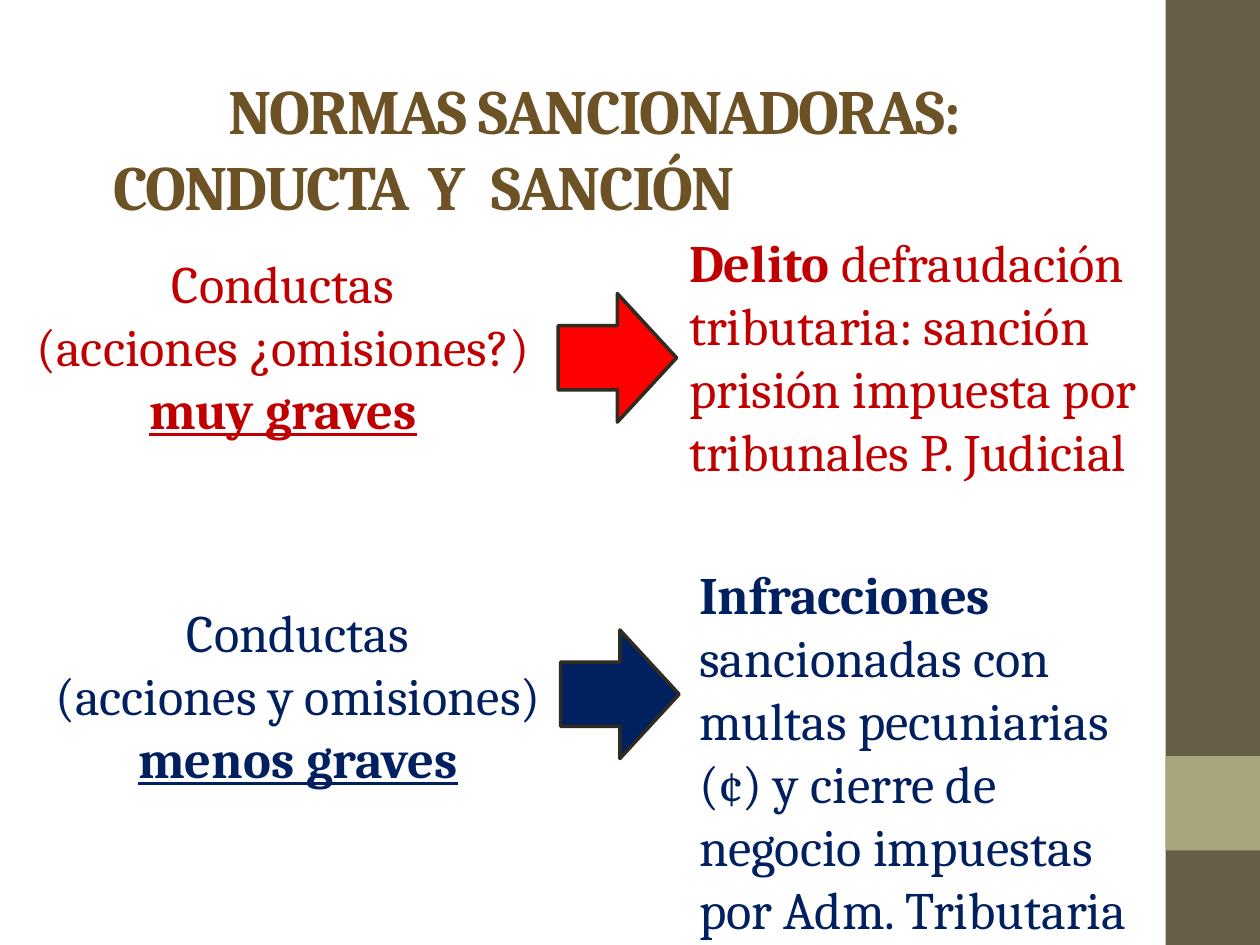
from lxml import etree
from pptx import Presentation
from pptx.dml.color import RGBColor
from pptx.enum.shapes import MSO_SHAPE
from pptx.enum.text import MSO_ANCHOR, PP_ALIGN
from pptx.oxml.ns import qn
from pptx.util import Inches, Pt

RECTANGLE = MSO_SHAPE.RECTANGLE
RIGHT_ARROW = MSO_SHAPE.RIGHT_ARROW
TOP = MSO_ANCHOR.TOP
LEFT = PP_ALIGN.LEFT
CENTER = PP_ALIGN.CENTER

FONT = "Cambria"
BROWN, OLIVE, SAGE, OUTLINE = "6D5225", "675E47", "A9A57C", "2F2B20"
DARK_RED, RED, NAVY = "C00000", "FF0000", "002060"


def color(hex_string):
    """Return the colour for a hex string."""
    return RGBColor.from_string(hex_string)


def add_filled_shape(slide, kind, box, fill, line=None):
    """Place a preset shape with a plain fill and an optional outline."""
    shape = slide.shapes.add_shape(kind, *map(Inches, box))
    shape.shadow.inherit = False
    shape.fill.solid()
    shape.fill.fore_color.rgb = color(fill)
    if line:
        shape.line.color.rgb = color(line)
        shape.line.width = Pt(2)
    else:
        shape.line.fill.background()


def add_text(slide, box, paragraphs, size, hex_color, alignment):
    """Place wrapped text whose runs are pairs of wording and style letters."""
    frame = slide.shapes.add_textbox(*map(Inches, box)).text_frame
    frame.word_wrap = True
    frame.vertical_anchor = TOP
    for index, runs in enumerate(paragraphs):
        paragraph = frame.add_paragraph() if index else frame.paragraphs[0]
        paragraph.alignment = alignment
        for text, style in runs:
            run = paragraph.add_run()
            run.text = text
            run.font.name = FONT
            run.font.size = Pt(size)
            run.font.bold = "b" in style
            run.font.underline = "u" in style
            run.font.color.rgb = color(hex_color)
    return frame


def add_sidebar(slide, box):
    """Draw the side band with its square accent."""
    left, top, width, height = box
    add_filled_shape(slide, RECTANGLE, box, OLIVE)
    accent_top = top + height - 2 * width
    add_filled_shape(slide, RECTANGLE, (left, accent_top, width, width), SAGE)


def add_title(slide, box):
    """Write the heading with its second line spread over tab stops."""
    lines = [[("NORMAS SANCIONADORAS:", "b")], [("CONDUCTA\tY\tSANCIÓN", "b")]]
    frame = add_text(slide, box, lines, 36, BROWN, CENTER)
    for paragraph in frame.paragraphs:
        for run in paragraph.runs:
            run.font._element.set("spc", "-100")
    columns = frame.paragraphs[1]
    columns.alignment = LEFT
    properties = columns._p.get_or_add_pPr()
    properties.set("marL", str(Inches(0.45)))
    properties.set("indent", "0")
    tabs = etree.SubElement(properties, qn("a:tabLst"))
    for position in (4.34, 6.14):
        etree.SubElement(tabs, qn("a:tab"), pos=str(Inches(position)), algn="l")


def add_rule(slide, conduct_box, arrow_at, sanction_box, conduct, sanction, text_color, arrow_color):
    """Link a conduct to its sanction with an arrow."""
    add_text(slide, conduct_box, conduct, 30, text_color, CENTER)
    add_filled_shape(slide, RIGHT_ARROW, (*arrow_at, 0.94, 1.02), arrow_color, OUTLINE)
    add_text(slide, sanction_box, [sanction], 30, text_color, LEFT)


def main():
    """Build and save the slide."""
    presentation = Presentation()
    presentation.slide_width = Inches(10)
    presentation.slide_height = Inches(7.5)
    slide = presentation.slides.add_slide(presentation.slide_layouts[6])
    add_sidebar(slide, (9.25, 0, 0.75, 7.5))
    add_title(slide, (0.35, 0.52, 8.74, 1.42))
    add_rule(
        slide, (0, 1.94, 4.49, 1.62), (4.43, 2.33), (5.37, 1.78, 3.98, 2.12),
        [[("Conductas", "")], [("(acciones ¿omisiones?) ", ""), ("muy graves", "bu")]],
        [("Delito", "b"),
         (" defraudación tributaria: sanción prisión impuesta por tribunales P. Judicial", "")],
        DARK_RED, RED,
    )
    add_rule(
        slide, (0.12, 4.71, 4.49, 1.62), (4.45, 5), (5.45, 4.41, 3.91, 3.13),
        [[("Conductas", "")], [("(acciones y omisiones)", "")], [("menos graves", "bu")]],
        [("Infracciones", "b"),
         (" sancionadas con multas pecuniarias (¢) y cierre de negocio impuestas por Adm. Tributaria", "")],
        NAVY, NAVY,
    )
    presentation.save("out.pptx")


if __name__ == "__main__":
    main()
